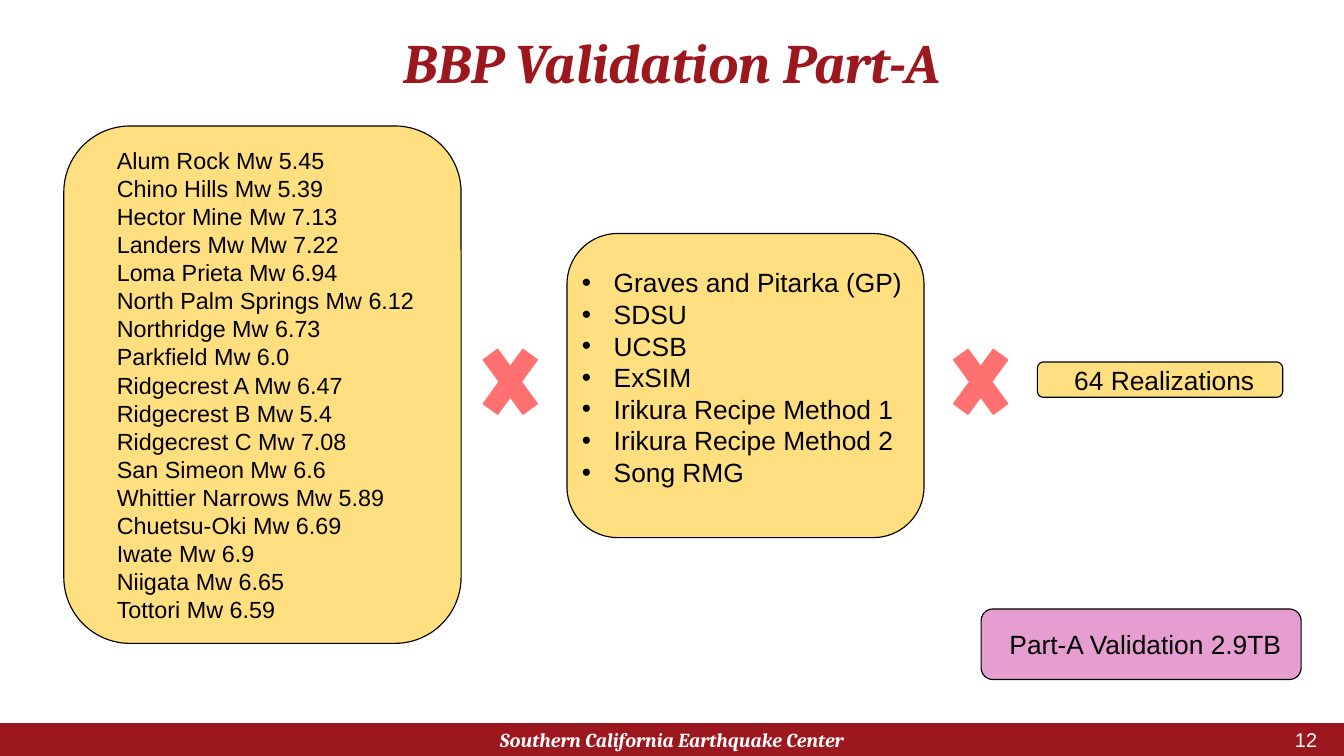
from dataclasses import dataclass

from pptx import Presentation
from pptx.dml.color import RGBColor
from pptx.enum.shapes import MSO_SHAPE as Shape
from pptx.enum.text import MSO_ANCHOR as Anchor, PP_ALIGN as Align
from pptx.oxml.ns import qn
from pptx.util import Inches, Pt
from lxml.etree import SubElement


@dataclass(frozen=True)
class Theme:
    """Colours, fonts and type sizes of the slide."""
    crimson: str = "9D171E"
    amber: str = "FFC000"
    coral: str = "FF7070"
    magenta: str = "CE3FA3"
    black: str = "000000"
    white: str = "FFFFFF"
    heading_font: str = "Cambria"
    body_font: str = "Arial"
    title_size: float = 47.7
    label_size: float = 22.6
    list_size: float = 20
    footer_size: float = 17


class SlideBuilder:
    """Draws styled elements on the current slide."""

    def __init__(self, slide, theme):
        self.slide = slide
        self.theme = theme

    def apply(self, target, values):
        """Set every attribute named in values."""
        for name, value in values.items():
            setattr(target, name, value)

    def fill_text(self, shape, lines, size, color, align=Align.LEFT, font=None,
                  strong=False, spacing=None, margins=(0, 0, 0, 0), indent=(0, 0), bullet=None):
        """Fill a shape with formatted paragraphs."""
        frame = shape.text_frame
        sides = ("margin_left", "margin_top", "margin_right", "margin_bottom")
        self.apply(frame, dict(zip(sides, map(Inches, margins))))
        self.apply(frame, {"word_wrap": True, "vertical_anchor": Anchor.MIDDLE})
        frame.text = "\n".join(lines)
        for paragraph in frame.paragraphs:
            self.apply(paragraph, {"alignment": align, "line_spacing": spacing})
            self.apply(paragraph.runs[0].font, {
                "name": font or self.theme.body_font, "size": Pt(size),
                "bold": strong, "italic": strong})
            paragraph.runs[0].font.color.rgb = RGBColor.from_string(color)
            properties = paragraph._p.get_or_add_pPr()
            for name, value in zip(("marL", "indent"), indent):
                properties.set(name, str(Inches(value)))
            if bullet:
                SubElement(properties, qn("a:buFont")).set("typeface", self.theme.body_font)
                SubElement(properties, qn("a:buChar")).set("char", bullet)

    def text(self, box, line, size, color, **style):
        """Add a single-line text box."""
        shape = self.slide.shapes.add_textbox(*map(Inches, box))
        self.fill_text(shape, [line], size, color, margins=(0.12, 0.06, 0.12, 0.06), **style)

    def shape(self, kind, box, fill, line=None, opacity=None):
        """Add a filled preset shape."""
        shape = self.slide.shapes.add_shape(kind, *map(Inches, box))
        shape.shadow.inherit = False
        shape.fill.solid()
        shape.fill.fore_color.rgb = RGBColor.from_string(fill)
        if opacity:
            color = shape._element.spPr.find(qn("a:solidFill"))[0]
            SubElement(color, qn("a:alpha")).set("val", str(opacity * 1000))
        if line:
            shape.line.color.rgb = RGBColor.from_string(line)
            shape.line.width = Pt(1)
        else:
            shape.line.fill.background()
        return shape

    def card(self, box, fill, lines, size, **style):
        """Add a translucent rounded box with text."""
        shape = self.shape(Shape.ROUNDED_RECTANGLE, box, fill, self.theme.black, 50)
        self.fill_text(shape, lines, size, self.theme.black, **style)

    def times(self, left):
        """Add a multiplication sign."""
        color = self.theme.coral
        self.shape(Shape.MATH_MULTIPLY, (left, 3.92, 0.91, 1.25), color, color)


EVENTS = [
    "Alum Rock Mw 5.45", "Chino Hills Mw 5.39", "Hector Mine Mw 7.13",
    "Landers Mw Mw 7.22", "Loma Prieta Mw 6.94", "North Palm Springs Mw 6.12",
    "Northridge Mw 6.73", "Parkfield Mw 6.0", "Ridgecrest A Mw 6.47",
    "Ridgecrest B Mw 5.4", "Ridgecrest C Mw 7.08", "San Simeon Mw 6.6",
    "Whittier Narrows Mw 5.89", "Chuetsu-Oki Mw 6.69", "Iwate Mw 6.9",
    "Niigata Mw 6.65", "Tottori Mw 6.59",
]
METHODS = [
    "Graves and Pitarka (GP)", "SDSU", "UCSB", "ExSIM",
    "Irikura Recipe Method 1", "Irikura Recipe Method 2", "Song RMG",
]


def main():
    """Build and save the slide."""
    presentation = Presentation()
    presentation.slide_width, presentation.slide_height = Inches(16), Inches(9)
    theme = Theme()
    builder = SlideBuilder(presentation.slides.add_slide(presentation.slide_layouts[6]), theme)
    heading = {"align": Align.CENTER, "font": theme.heading_font, "strong": True}
    label = {"align": Align.CENTER, "indent": (0.1, 0)}

    builder.shape(Shape.RECTANGLE, (0, 8.61, 16, 0.39), theme.crimson)
    builder.text((0.4, 0.36, 15.2, 0.84), "BBP Validation Part-A",
                 theme.title_size, theme.crimson, spacing=0.9, **heading)
    builder.text((5.3, 8.57, 5.4, 0.48), "Southern California Earthquake Center",
                 theme.footer_size, theme.white, **heading)
    builder.text((14.3, 8.69, 1.5, 0.24), "12", theme.footer_size, theme.white,
                 align=Align.RIGHT)

    builder.card((12.35, 4.31, 2.92, 0.42), theme.amber, ["64 Realizations"],
                 theme.label_size, **label)
    builder.card((0.76, 1.5, 4.73, 6.16), theme.amber, EVENTS, theme.list_size,
                 spacing=Pt(24), indent=(0.4, 0))
    builder.card((6.75, 2.78, 4.25, 3.62), theme.amber, METHODS, theme.label_size,
                 spacing=Pt(27.1), margins=(0, 0.2, 0, 0.4), indent=(0.38, -0.38), bullet="•")
    for left in (5.62, 11.22):
        builder.times(left)
    builder.card((11.68, 7.25, 3.81, 0.84), theme.magenta, ["Part-A Validation 2.9TB"],
                 theme.label_size, **label)
    presentation.save("out.pptx")


if __name__ == "__main__":
    main()
